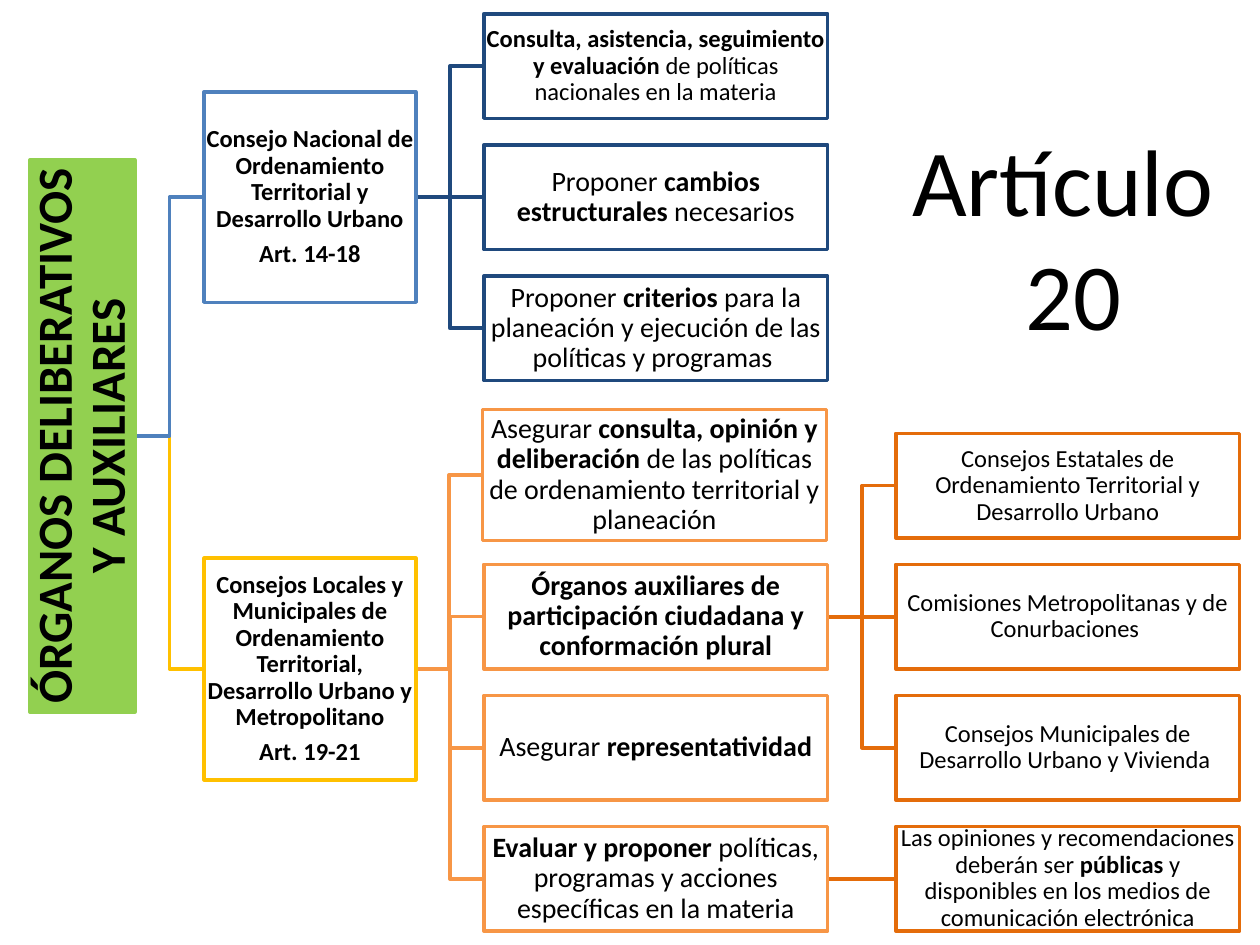
from dataclasses import dataclass, field

from lxml import etree
from pptx import Presentation
from pptx.dml.color import RGBColor
from pptx.enum.shapes import MSO_CONNECTOR, MSO_SHAPE
from pptx.enum.text import MSO_ANCHOR, MSO_AUTO_SIZE, PP_ALIGN
from pptx.oxml.ns import qn
from pptx.util import Inches, Pt

RECTANGLE = MSO_SHAPE.RECTANGLE
ELBOW, STRAIGHT = MSO_CONNECTOR.ELBOW, MSO_CONNECTOR.STRAIGHT
MIDDLE, CENTER = MSO_ANCHOR.MIDDLE, PP_ALIGN.CENTER
GROW = MSO_AUTO_SIZE.SHAPE_TO_FIT_TEXT

FONT = "Calibri"
BLACK, GREEN, BLUE, NAVY = "000000", "92D050", "4F81BD", "1F497D"
YELLOW, ORANGE, DARK_ORANGE = "FFC000", "F79646", "E46C0A"

COUNCIL_LEFT, DUTY_LEFT, BODY_LEFT = 1.62, 3.84, 7.11
DUTY_WIDTH, DUTY_HEIGHT, ROW_STEP = 2.73, 0.83, 1.04
NATIONAL_TOP, LOCAL_TOP = 0.11, 3.44


@dataclass
class Node:
    box: tuple
    color: str
    size: int
    paragraphs: list
    children: list = field(default_factory=list)

    @property
    def middle(self):
        return self.box[1] + self.box[3] / 2

    @property
    def right(self):
        return self.box[0] + self.box[2]


def rgb(color):
    return RGBColor.from_string(color)


def row_box(left, top, row):
    return left, top + row * ROW_STEP, DUTY_WIDTH, DUTY_HEIGHT


def bold(text):
    return text, True


def plain(text):
    return text, False


def write_paragraphs(frame, paragraphs, size):
    for index, runs in enumerate(paragraphs):
        paragraph = frame.paragraphs[0] if index == 0 else frame.add_paragraph()
        paragraph.alignment = CENTER
        for text, is_bold in runs:
            run = paragraph.add_run()
            run.text = text
            run.font.name = FONT
            run.font.size = Pt(size)
            run.font.bold = is_bold
            run.font.color.rgb = rgb(BLACK)


def draw_node(slide, box, node, inset=0.01):
    block = slide.shapes.add_shape(RECTANGLE, *map(Inches, box))
    block.shadow.inherit = False
    block.fill.background()
    block.line.color.rgb = rgb(node.color)
    block.line.width = Pt(2)
    frame = block.text_frame
    frame.word_wrap = True
    frame.vertical_anchor = MIDDLE
    frame.margin_left = frame.margin_right = Inches(inset)
    frame.margin_top = frame.margin_bottom = Inches(inset)
    write_paragraphs(frame, node.paragraphs, node.size)
    for paragraph in frame.paragraphs:
        paragraph.line_spacing = 0.9
        paragraph.space_after = Pt(node.size * 0.35)
    return block


def draw_root(slide, box, node):
    left, top, width, height = box
    shift = (height - width) / 2
    banner = draw_node(slide, (left - shift, top + shift, height, width), node, 0.02)
    banner.rotation = 270
    banner.fill.solid()
    banner.fill.fore_color.rgb = rgb(node.color)
    banner.line.width = Pt(2.25)


def draw_link(slide, parent, child, color):
    level = abs(parent.middle - child.middle) < 0.02
    end = parent.middle if level else child.middle
    link = slide.shapes.add_connector(
        STRAIGHT if level else ELBOW,
        Inches(parent.right), Inches(parent.middle), Inches(child.box[0]), Inches(end))
    link.line.color.rgb = rgb(color)
    link.line.width = Pt(2)
    etree.SubElement(link._element.spPr, qn("a:effectLst"))


def draw_links(slide, parent):
    for child in reversed(parent.children):
        draw_links(slide, child)
        draw_link(slide, parent, child, child.color)


def draw_branches(slide, parent):
    for child in parent.children:
        draw_node(slide, child.box, child)
        draw_branches(slide, child)


def draw_tree(slide, box, root):
    draw_links(slide, root)
    draw_root(slide, box, root)
    draw_branches(slide, root)


def draw_title(slide, box):
    title = slide.shapes.add_textbox(*map(Inches, box))
    title.text_frame.word_wrap = False
    title.text_frame.auto_size = GROW
    write_paragraphs(title.text_frame, [[plain("Artículo ")], [plain("20")]], 54)


def national_council():
    duties = [
        (14, [bold("Consulta, asistencia, seguimiento y evaluación "),
              plain("de políticas nacionales en la materia")]),
        (16, [plain("Proponer "), bold("cambios estructurales "), plain("necesarios")]),
        (16, [plain("Proponer "), bold("criterios"),
              plain(" para la planeación y ejecución de las políticas y programas ")]),
    ]
    return Node(
        (COUNCIL_LEFT, 0.73, 1.68, 1.67), BLUE, 14,
        [[bold("Consejo Nacional de Ordenamiento Territorial y Desarrollo Urbano")],
         [bold("Art. 14-18")]],
        [Node(row_box(DUTY_LEFT, NATIONAL_TOP, row), NAVY, size, [runs])
         for row, (size, runs) in enumerate(duties)])


def local_councils():
    bodies = [
        [plain("Consejos Estatales de Ordenamiento Territorial y Desarrollo Urbano")],
        [plain("Comisiones Metropolitanas y de Conurbaciones ")],
        [plain("Consejos Municipales de Desarrollo Urbano y Vivienda ")],
        [plain("Las opiniones y recomendaciones deberán ser "), bold("públicas "),
         plain("y disponibles en los medios de comunicación electrónica")],
    ]
    body_nodes = [Node(row_box(BODY_LEFT, LOCAL_TOP, row), DARK_ORANGE, 14, [runs])
                  for row, runs in enumerate(bodies)]
    duties = [
        ([bold("Órganos auxiliares de participación ciudadana y conformación plural")],
         body_nodes[:3]),
        ([plain("Asegurar "), bold("representatividad")], []),
        ([bold("Evaluar y proponer "),
          plain("políticas, programas y acciones específicas en la materia")],
         body_nodes[3:]),
    ]
    consultation = Node(
        (3.83, 3.25, DUTY_WIDTH, 1.04), ORANGE, 16,
        [[plain("Asegurar "), bold("consulta, opinión y deliberación "),
          plain("de las políticas de ordenamiento territorial y planeación")]])
    return Node(
        (COUNCIL_LEFT, 4.43, 1.68, 1.76), YELLOW, 14,
        [[bold("Consejos Locales y Municipales de Ordenamiento Territorial, "
               "Desarrollo Urbano y Metropolitano")],
         [bold("Art. 19-21")]],
        [consultation] + [
            Node(row_box(DUTY_LEFT, LOCAL_TOP, row), ORANGE, 16, [runs], children)
            for row, (runs, children) in enumerate(duties, 1)])


def main():
    deck = Presentation()
    deck.slide_width, deck.slide_height = Inches(10), Inches(7.5)
    slide = deck.slides.add_slide(deck.slide_layouts[6])
    root = Node((0.24, 1.27, 0.83, 4.38), GREEN, 28,
                [[bold("ÓRGANOS DELIBERATIVOS Y AUXILIARES")]],
                [national_council(), local_councils()])
    draw_tree(slide, root.box, root)
    draw_title(slide, (7.12, 0.92, 2.8, 1.92))
    deck.save("out.pptx")


if __name__ == "__main__":
    main()
